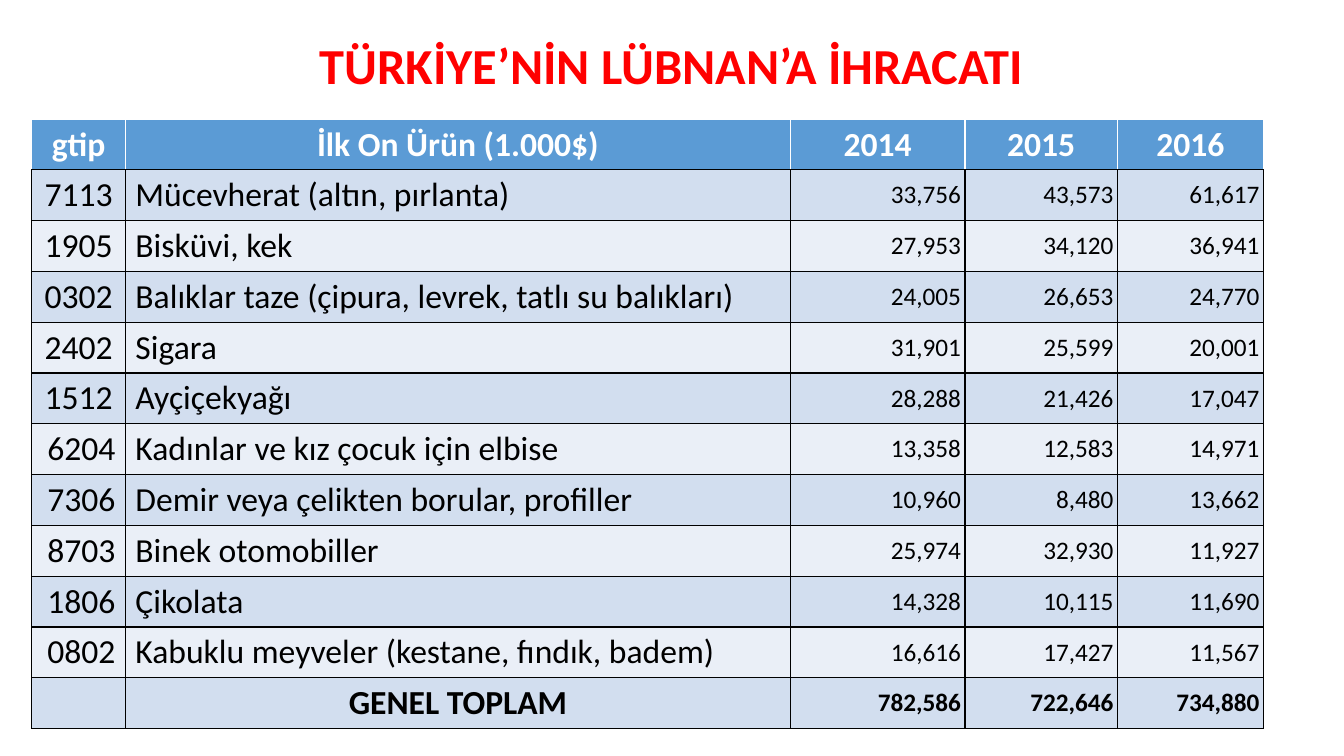
from dataclasses import dataclass

from lxml import etree
from pptx import Presentation
from pptx.dml import color
from pptx.enum import text
from pptx.oxml import ns
from pptx import util as u


@dataclass(frozen=True)
class Theme:
    font: str = "Calibri"
    heading: str = "FF0000"
    header: str = "5B9BD5"
    bands: tuple = ("D2DEEF", "EAEFF7")
    light: str = "FFFFFF"
    dark: str = "000000"
    heading_size: int = 36
    label_size: int = 24
    figure_size: int = 18


LEFT, CENTER, RIGHT = text.PP_ALIGN.LEFT, text.PP_ALIGN.CENTER, text.PP_ALIGN.RIGHT
MIDDLE = text.MSO_ANCHOR.MIDDLE

HEADINGS = ("gtip", "İlk On Ürün (1.000$)", "2014", "2015", "2016")
PRODUCTS = (
    ("7113", "Mücevherat (altın, pırlanta)", "33,756", "43,573", "61,617"),
    ("1905", "Bisküvi, kek", "27,953", "34,120", "36,941"),
    ("0302", "Balıklar taze (çipura, levrek, tatlı su balıkları)", "24,005", "26,653", "24,770"),
    ("2402", "Sigara", "31,901", "25,599", "20,001"),
    ("1512", "Ayçiçekyağı", "28,288", "21,426", "17,047"),
    ("6204", "Kadınlar ve kız çocuk için elbise", "13,358", "12,583", "14,971"),
    ("7306", "Demir veya çelikten borular, profiller", "10,960", "8,480", "13,662"),
    ("8703", "Binek otomobiller", "25,974", "32,930", "11,927"),
    ("1806", "Çikolata", "14,328", "10,115", "11,690"),
    ("0802", "Kabuklu meyveler (kestane, fındık, badem)", "16,616", "17,427", "11,567"),
)
TOTAL = ("", "GENEL TOPLAM", "782,586", "722,646", "734,880")
COLUMN_WIDTHS = (2.36, 16.76, 4.4, 3.84, 3.68)
ROW_HEIGHT = 1.28
CENTERED_CODES = 5


class ExportSlide:
    def __init__(self, deck, theme):
        self.theme = theme
        self.slide = deck.slides.add_slide(deck.slide_layouts[6])

    def add_words(self, paragraph, words, size, ink, bold, align):
        paragraph.alignment = align
        run = paragraph.add_run()
        run.text = words
        run.font.name = self.theme.font
        run.font.size = u.Pt(size)
        run.font.bold = bold
        run.font.color.rgb = color.RGBColor.from_string(ink)

    def title(self, words, left, top, width, height):
        box = self.slide.shapes.add_textbox(u.Cm(left), u.Cm(top), u.Cm(width), u.Cm(height))
        frame = box.text_frame
        frame.word_wrap = True
        frame.vertical_anchor = MIDDLE
        paragraph = frame.paragraphs[0]
        paragraph.line_spacing = 0.9
        self.add_words(paragraph, words, self.theme.heading_size, self.theme.heading, True, CENTER)

    def borders(self, cell, is_header):
        properties = cell._tc.get_or_add_tcPr()
        for side in "LRTB":
            ink = self.theme.light if is_header and side != "B" else self.theme.dark
            line = etree.SubElement(properties, ns.qn(f"a:ln{side}"), w=str(u.Pt(1)))
            fill = etree.SubElement(line, ns.qn("a:solidFill"))
            etree.SubElement(fill, ns.qn("a:srgbClr"), val=ink)

    def cell(self, cell, words, row, column, last):
        theme = self.theme
        is_header = row == 0
        is_figure = column > 1 and not is_header
        self.borders(cell, is_header)
        cell.fill.solid()
        background = theme.header if is_header else theme.bands[(row - 1) % 2]
        cell.fill.fore_color.rgb = color.RGBColor.from_string(background)
        if is_figure:
            cell.vertical_anchor = MIDDLE
            cell.margin_left = cell.margin_right = u.Cm(0.1)
            cell.margin_top = cell.margin_bottom = u.Cm(0.1)
        if not words:
            return
        if is_header or (column == 0 and row <= CENTERED_CODES) or (column == 1 and row == last):
            align = CENTER
        else:
            align = LEFT if column == 1 else RIGHT
        size = theme.figure_size if is_figure else theme.label_size
        ink = theme.light if is_header else theme.dark
        self.add_words(cell.text_frame.paragraphs[0], words, size, ink, row in (0, last), align)

    def table(self, rows, widths, row_height, left, top):
        frame = self.slide.shapes.add_table(
            len(rows), len(widths), u.Cm(left), u.Cm(top),
            u.Cm(sum(widths)), u.Cm(row_height * len(rows)),
        )
        exports = frame.table
        exports.horz_banding = False
        for column, width in zip(exports.columns, widths):
            column.width = u.Cm(width)
        for r, values in enumerate(rows):
            exports.rows[r].height = u.Cm(row_height)
            for c, words in enumerate(values):
                self.cell(exports.cell(r, c), words, r, c, len(rows) - 1)


def main():
    deck = Presentation()
    deck.slide_width, deck.slide_height = u.Cm(33.87), u.Cm(19.05)
    exports = ExportSlide(deck, Theme())
    exports.title("TÜRKİYE’NİN LÜBNAN’A İHRACATI", 2.33, 1.02, 29.21, 1.4)
    exports.table((HEADINGS, *PRODUCTS, TOTAL), COLUMN_WIDTHS, ROW_HEIGHT, 0.8, 3)
    deck.save("out.pptx")


if __name__ == "__main__":
    main()
